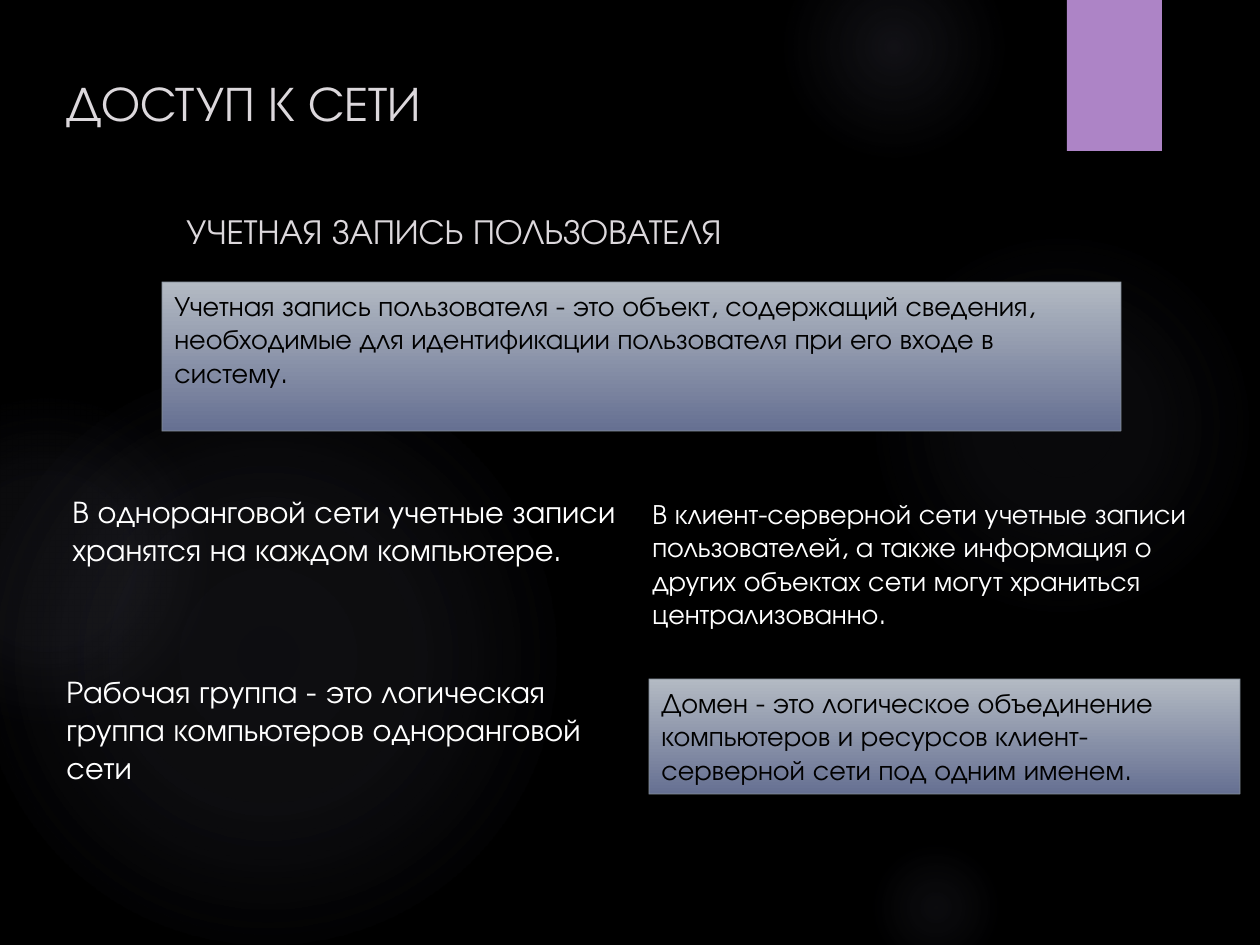
from lxml.etree import SubElement
from pptx import Presentation
from pptx.dml.color import RGBColor
from pptx.enum.shapes import MSO_SHAPE
from pptx.enum.text import MSO_ANCHOR, MSO_AUTO_SIZE, PP_ALIGN
from pptx.oxml import parse_xml
from pptx.oxml.ns import nsdecls, qn
from pptx.util import Emu, Pt

PX = 914400 / 126
THEME = {
    "font": "TeX Gyre Adventor",
    "background": "000000", "glow": "7F7B9A", "ribbon": "AD84C6",
    "heading": "DCD8DC", "light": "FFFFFF", "dark": "000000",
    "panel_top": "B3BAC3", "panel_bottom": "667092", "panel_edge": "858E99",
    "title": 28, "subtitle": 20, "large": 18, "body": 16,
}


def px(*lengths):
    return [Emu(round(length * PX)) for length in lengths]


def fill_gradient(shape, stops, direction):
    """Stops are (position %, colour, opacity %)."""
    stop_xml = "".join(
        f'<a:gs pos="{position * 1000}"><a:srgbClr val="{colour}">'
        f'<a:alpha val="{opacity * 1000}"/></a:srgbClr></a:gs>'
        for position, colour, opacity in stops)
    gradient = parse_xml(f'<a:gradFill {nsdecls("a")} rotWithShape="1">'
                         f"<a:gsLst>{stop_xml}</a:gsLst>{direction}</a:gradFill>")
    shape._element.spPr.find(qn("a:prstGeom")).addnext(gradient)


presentation = Presentation()
presentation.slide_width, presentation.slide_height = px(1260, 945)
slide = presentation.slides.add_slide(presentation.slide_layouts[6])
slide.background.fill.solid()
slide.background.fill.fore_color.rgb = RGBColor.from_string(THEME["background"])

# Soft glows: left, top, diameter, then opacity at centre and middle, and fade end
radial = ('<a:path path="circle"><a:fillToRect l="50000" t="50000" '
          'r="50000" b="50000"/></a:path>')
glows = [
    (868, 231, 388, 7, 6, 69),
    (784, -63, 220, 14, 7, 73),
    (868, 840, 136, 9, 5, 66),
    (-21, 368, 577, 11, 10, 75),
    (-116, 399, 325, 8, 8, 72),
]
for left, top, diameter, centre, middle, fade_end in glows:
    glow = slide.shapes.add_shape(MSO_SHAPE.OVAL, *px(left, top, diameter, diameter))
    glow.shadow.inherit = False
    glow.line.fill.background()
    color = THEME["glow"]
    fill_gradient(glow, [(0, color, centre), (36, color, middle), (fade_end, color, 0)],
                  radial)

# Ribbon at the top edge
ribbon = slide.shapes.add_shape(MSO_SHAPE.RECTANGLE, *px(1067, 0, 95, 151))
ribbon.shadow.inherit = False
ribbon.fill.solid()
ribbon.fill.fore_color.rgb = RGBColor.from_string(THEME["ribbon"])
ribbon.line.fill.background()

# Headings, definition panels and notes: box, size, colour, panel or not, format, text
top_frame = {"vertical_anchor": MSO_ANCHOR.TOP}
growing = {**top_frame, "auto_size": MSO_AUTO_SIZE.SHAPE_TO_FIT_TEXT}
passages = [
    ((54, -3, 903, 210), "title", "heading", False,
     {"vertical_anchor": MSO_ANCHOR.MIDDLE}, PP_ALIGN.LEFT, "ДОСТУП К СЕТИ"),
    ((149, 193, 610, 65), "subtitle", "heading", False,
     {"vertical_anchor": MSO_ANCHOR.BOTTOM}, PP_ALIGN.CENTER,
     "УЧЕТНАЯ ЗАПИСЬ ПОЛЬЗОВАТЕЛЯ"),
    ((162, 282, 959, 149), "body", "dark", True, top_frame, PP_ALIGN.LEFT,
     "Учетная запись пользователя - это объект, содержащий сведения, "
     "необходимые для идентификации пользователя при его входе в систему."),
    ((60, 486, 591, 127), "large", "light", False, growing, PP_ALIGN.LEFT,
     "В одноранговой сети учетные записи хранятся на каждом компьютере."),
    ((54, 666, 591, 127), "large", "light", False, growing, PP_ALIGN.LEFT,
     "Рабочая группа - это логическая группа компьютеров одноранговой сети"),
    ((640, 490, 591, 149), "body", "light", False, growing, PP_ALIGN.LEFT,
     "В клиент-серверной сети учетные записи пользователей, а также информация "
     "о других объектах сети могут храниться централизованно."),
    ((649, 679, 591, 115), "body", "dark", True, growing, PP_ALIGN.LEFT,
     "Домен - это логическое объединение компьютеров и ресурсов "
     "клиент-серверной сети под одним именем."),
]
for box, size, color, is_panel, frame_format, alignment, wording in passages:
    if is_panel:
        passage = slide.shapes.add_shape(MSO_SHAPE.RECTANGLE, *px(*box))
        passage.shadow.inherit = False
        fill_gradient(passage, [(0, THEME["panel_top"], 100),
                                (100, THEME["panel_bottom"], 100)],
                      '<a:lin ang="5400000" scaled="0"/>')
        passage.line.color.rgb = RGBColor.from_string(THEME["panel_edge"])
        passage.line.width = Pt(0.75)
        edge_color = passage.line._ln.find(".//" + qn("a:srgbClr"))
        SubElement(edge_color, qn("a:alpha")).set("val", "60000")
    else:
        passage = slide.shapes.add_textbox(*px(*box))
    frame = passage.text_frame
    for name, value in {"word_wrap": True, **frame_format}.items():
        setattr(frame, name, value)
    paragraph = frame.paragraphs[0]
    paragraph.alignment = alignment
    run = paragraph.add_run()
    run.text = wording
    for name, value in {"name": THEME["font"], "size": Pt(THEME[size])}.items():
        setattr(run.font, name, value)
    run.font.color.rgb = RGBColor.from_string(THEME[color])

presentation.save("out.pptx")
